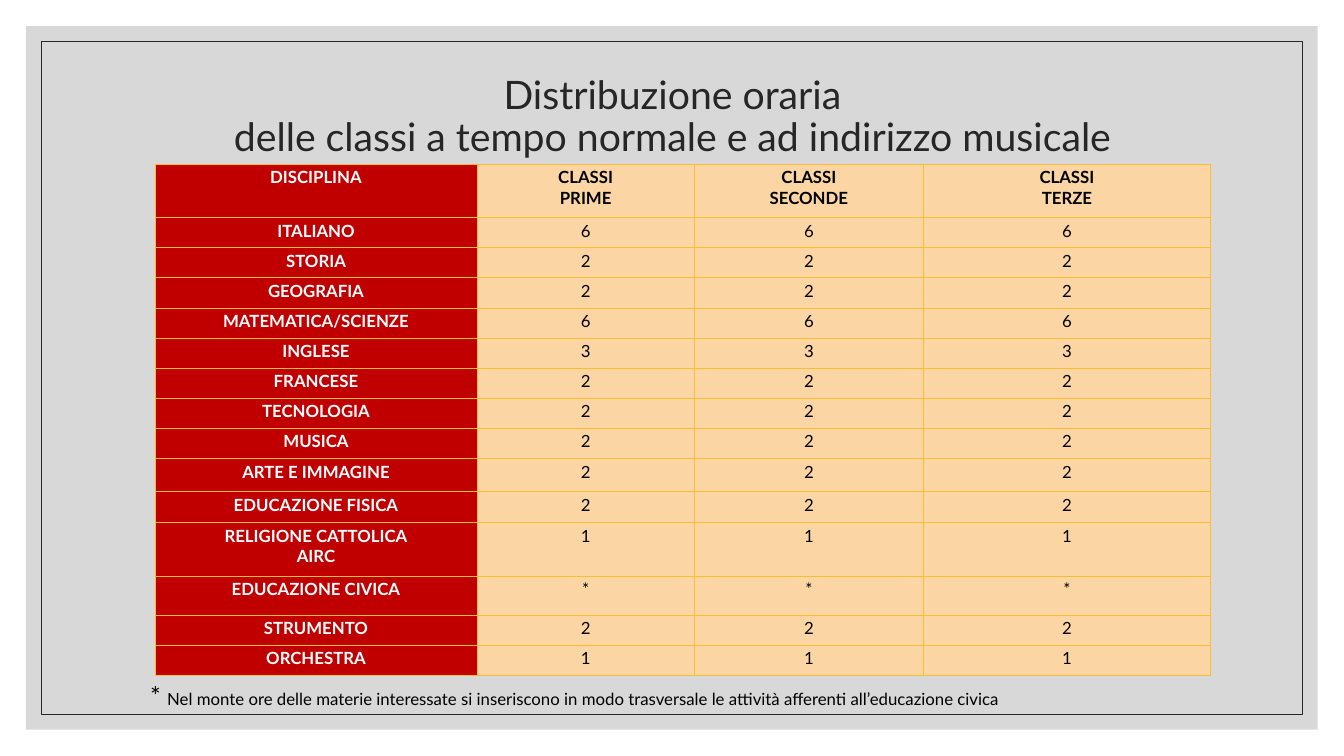
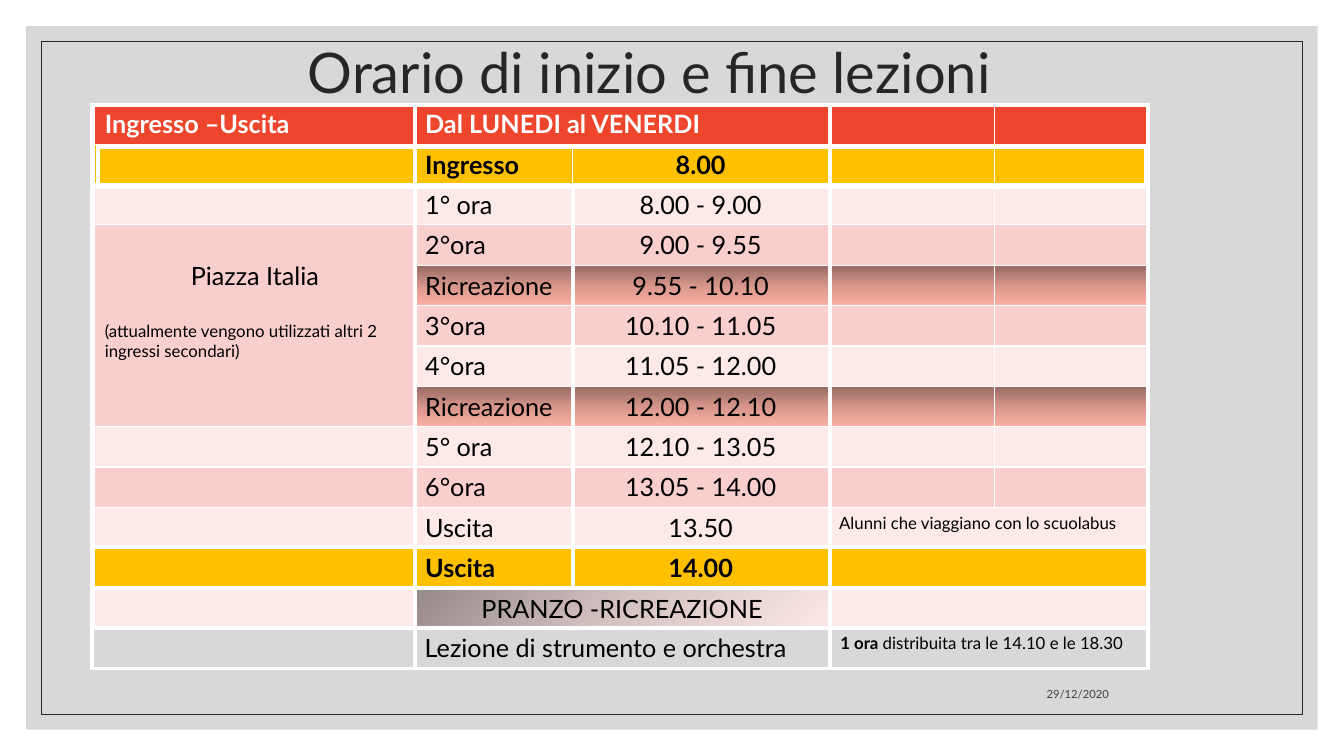
from dataclasses import dataclass

from lxml.etree import SubElement
from pptx import Presentation
from pptx.dml.color import RGBColor
from pptx.enum.shapes import MSO_SHAPE as Preset
from pptx.enum.text import MSO_ANCHOR as Anchor, PP_ALIGN as Align
from pptx.oxml.ns import qn
from pptx.util import Emu, Inches, Pt

WIDTH, HEIGHT = Inches(13.33), Inches(7.5)
FONT = "Lato"
BLACK, WHITE, INK, DATE_GREY, PAPER = "000000", "FFFFFF", "262626", "404040", "BFBFBF"
CRIMSON, PEACH, AMBER = "C00000", "FBD6A4", "FABD2F"
RED, GOLD, LIGHT, ROSE = "EE462D", "FFC000", "FCE9E8", "F8CFCD"
BREAK_FADE = (90, ("966962", "D6958B", "FEB1A5"))
LUNCH_FADE = (45, ("968989", "D5C3C2", "FDE7E6"))

SUBJECTS = [
    ("ITALIANO", "6"), ("STORIA", "2"), ("GEOGRAFIA", "2"),
    ("MATEMATICA/SCIENZE", "6"), ("INGLESE", "3"), ("FRANCESE", "2"),
    ("TECNOLOGIA", "2"), ("MUSICA", "2"), ("ARTE E IMMAGINE", "2"),
    ("EDUCAZIONE FISICA", "2"), ("RELIGIONE CATTOLICA\nAIRC", "1"),
    ("EDUCAZIONE CIVICA", "*"), ("STRUMENTO", "2"), ("ORCHESTRA", "1"),
]
SUBJECT_ROWS = [0.53] + [0.3] * 9 + [0.31, 0.53, 0.39, 0.3, 0.3]
SUBJECT_ROWS[9] = 0.33
LESSONS = [
    ("Ingresso", "8.00", GOLD),
    ("1° ora", "8.00 - 9.00", LIGHT),
    ("2°ora", "9.00 - 9.55", ROSE),
    ("Ricreazione", "9.55 - 10.10", BREAK_FADE),
    ("3°ora", "10.10 - 11.05", ROSE),
    ("4°ora", "11.05 - 12.00", LIGHT),
    ("Ricreazione", "12.00 - 12.10", BREAK_FADE),
    ("5° ora", "12.10 - 13.05", LIGHT),
    ("6°ora", "13.05 - 14.00", ROSE),
    ("Uscita", "13.50", LIGHT),
    ("Uscita", "14.00", GOLD),
]


@dataclass
class Box:
    """An area in hundredths of the slide's width and height."""
    left: float
    top: float
    width: float
    height: float

    def place(self):
        """Return left, top, width and height in EMU."""
        return (Emu(int(WIDTH * self.left / 100)), Emu(int(HEIGHT * self.top / 100)),
                Emu(int(WIDTH * self.width / 100)), Emu(int(HEIGHT * self.height / 100)))


@dataclass
class Span:
    """A piece of text with one look."""
    text: str
    size: float = 18
    bold: bool = False
    color: str = BLACK


def rgb(value):
    """Turn a hex string into a colour."""
    return RGBColor.from_string(value)


def write(para, spans, align=Align.LEFT):
    """Write spans into a paragraph, turning newlines into line breaks."""
    para.alignment = align
    for span in spans:
        for number, line in enumerate(span.text.split("\n")):
            if number:
                para.add_line_break()
            run = para.add_run()
            run.text = line
            run.font.name = FONT
            run.font.size = Pt(span.size)
            run.font.bold = span.bold
            run.font.color.rgb = rgb(span.color)


def add_text(page, box, spans, align=Align.LEFT, anchor=Anchor.TOP):
    """Add a wrapped text box and return its paragraph."""
    frame = page.shapes.add_textbox(*box.place()).text_frame
    frame.word_wrap = True
    frame.vertical_anchor = anchor
    write(frame.paragraphs[0], spans, align)
    return frame.paragraphs[0]


def add_title(page, box, text, size):
    """Add a centred title."""
    para = add_text(page, box, [Span(text, size, color=INK)], Align.CENTER, Anchor.MIDDLE)
    para.line_spacing = 0.9


def add_panel(page, inset):
    """Add a rectangle inset equally from all slide edges."""
    margin = int(WIDTH * inset / 100)
    panel = page.shapes.add_shape(Preset.RECTANGLE, margin, margin,
                                  WIDTH - 2 * margin, HEIGHT - 2 * margin)
    panel.shadow.inherit = False
    return panel


def add_page(deck):
    """Add a blank page with the grey panel and its thin frame."""
    page = deck.slides.add_slide(deck.slide_layouts[6])
    panel = add_panel(page, 1.95)
    panel.fill.solid()
    panel.fill.fore_color.rgb = rgb(PAPER)
    color = panel.fill._xPr.find(qn("a:solidFill"))[0]
    SubElement(color, qn("a:alpha"), val="60000")
    panel.line.fill.background()
    border = add_panel(page, 3.08)
    border.fill.background()
    border.line.color.rgb = rgb(INK)
    border.line.width = Pt(0.5)
    return page


def rule(cell, color, width):
    """Draw the four borders of a cell that has no fill yet."""
    props = cell._tc.get_or_add_tcPr()
    for side in "LRTB":
        line = SubElement(props, qn(f"a:ln{side}"), w=str(Pt(width)))
        SubElement(SubElement(line, qn("a:solidFill")), qn("a:srgbClr"), val=color)


def paint(cell, fill):
    """Fill a cell with a colour, with an (angle, colours) fade, or with nothing."""
    if fill is None:
        cell.fill.background()
    elif isinstance(fill, str):
        cell.fill.solid()
        cell.fill.fore_color.rgb = rgb(fill)
    else:
        angle, colors = fill
        fade = SubElement(cell._tc.get_or_add_tcPr(), qn("a:gradFill"))
        stops = SubElement(fade, qn("a:gsLst"))
        for number, color in enumerate(colors):
            stop = SubElement(stops, qn("a:gs"), pos=str(number * 50000))
            SubElement(stop, qn("a:srgbClr"), val=color)
        SubElement(fade, qn("a:lin"), ang=str(angle * 60000), scaled="0")


def add_grid(page, box, columns, rows, fills, color, width):
    """Add a table whose columns and rows share the box by weight."""
    place = box.place()
    table = page.shapes.add_table(len(rows), len(columns), *place).table
    table.first_row = table.horz_banding = False
    for column, weight in zip(table.columns, columns):
        column.width = Emu(int(place[2] * weight / sum(columns)))
    for row, weight in zip(table.rows, rows):
        row.height = Emu(int(place[3] * weight / sum(rows)))
    for row, row_fills in zip(table.rows, fills):
        for cell, fill in zip(row.cells, row_fills):
            rule(cell, color, width)
            paint(cell, fill)
    return table


def merge(table, row, first, last):
    """Join neighbouring cells of one row."""
    table.cell(row, first).merge(table.cell(row, last))


def put(cell, spans, align=Align.LEFT):
    """Write spans into the first paragraph of a cell."""
    write(cell.text_frame.paragraphs[0], spans, align)


def add_subjects(page, box):
    """Add the weekly hours of each subject."""
    fills = [[CRIMSON] + [PEACH] * 3] * len(SUBJECT_ROWS)
    table = add_grid(page, box, [3.19, 2.16, 2.27, 2.85], SUBJECT_ROWS, fills, AMBER, 0.5)
    heads = ["DISCIPLINA"] + [f"CLASSI\n{year}" for year in ("PRIME", "SECONDE", "TERZE")]
    lines = [heads] + [[name] + [hours] * 3 for name, hours in SUBJECTS]
    for number, line in enumerate(lines):
        for index, text in enumerate(line):
            cell = table.cell(number, index)
            cell.margin_left = cell.margin_right = Inches(0.03)
            cell.margin_top = cell.margin_bottom = Inches(0.03)
            span = Span(text, 12, number == 0 or index == 0, BLACK if index else WHITE)
            put(cell, [span], Align.CENTER)


def add_entrance(table, first, last):
    """Join the entrance cells and describe the entrance."""
    cell = table.cell(first, 0)
    cell.merge(table.cell(last, 0))
    cell.margin_top = Inches(0.35)
    put(cell, [Span("Piazza Italia")], Align.CENTER)
    para = cell.text_frame.add_paragraph()
    para.space_before = Pt(21.6)
    write(para, [Span("(attualmente vengono utilizzati altri 2 ingressi secondari)", 12)])


def add_lessons(page, box):
    """Add the daily timetable."""
    fills = [[RED] * 5] + [[fill] * 5 for _, _, fill in LESSONS]
    fills.append([LIGHT] + [LUNCH_FADE] * 2 + [LIGHT] * 2)
    fills[3:8] = [[ROSE] + line[1:] for line in fills[3:8]]
    table = add_grid(page, box, [3.18, 1.56, 2.55, 1.64, 1.51], [1] * len(fills),
                     fills, WHITE, 1)
    for index, text in enumerate(("Ingresso –Uscita", "Dal LUNEDI al VENERDI")):
        put(table.cell(0, index), [Span(text, bold=True, color=WHITE)])
    for number, (name, hours, fill) in enumerate(LESSONS, 1):
        put(table.cell(number, 1), [Span(name, bold=fill == GOLD)])
        put(table.cell(number, 2), [Span(hours, bold=fill == GOLD)], Align.CENTER)
    put(table.cell(10, 3), [Span("Alunni che viaggiano con lo scuolabus", 12)])
    put(table.cell(12, 1), [Span("PRANZO -RICREAZIONE")], Align.CENTER)
    for row, first in ((0, 1), (10, 3), (11, 3), (12, 1), (12, 3)):
        merge(table, row, first, first + 1)
    add_entrance(table, 3, 7)


def add_outline(page, box):
    """Add the thick white grid, whose last row holds the music lessons."""
    table = add_grid(page, box, [3.2, 1.57, 2.55, 3.15], [0.79, 3.6, 0.4, 0.4, 0.4],
                     [[None] * 4] * 5, WHITE, 3)
    for row in (0, 3, 4):
        merge(table, row, 1, 2)
    put(table.cell(4, 1), [Span("Lezione di strumento e orchestra")])
    put(table.cell(4, 3), [Span("1 ora ", 12, True),
                           Span("distribuita tra le 14.10 e le 18.30", 12)])


def subjects_page(deck):
    """Build the page on weekly hours."""
    page = add_page(deck)
    add_title(page, Box(8.78, 5.6, 82.5, 20),
              "Distribuzione oraria\ndelle classi a tempo normale e ad indirizzo musicale", 28)
    add_subjects(page, Box(11.55, 21.73, 78.53, 67.6))
    note = ("Nel monte ore delle materie interessate si inseriscono in modo trasversale "
            "le attività afferenti all’educazione civica")
    add_text(page, Box(10.43, 89.33, 76.5, 5.33), [Span("* "), Span(note, 12)])


def lessons_page(deck):
    """Build the page on lesson times."""
    page = add_page(deck)
    add_title(page, Box(7.05, 0, 82.5, 20), "Orario di inizio e fine lezioni", 40)
    add_lessons(page, Box(7.05, 13.73, 78.25, 69.33))
    add_text(page, Box(59.55, 88, 23.7, 5.33), [Span("29/12/2020", 8, color=DATE_GREY)],
             Align.RIGHT, Anchor.BOTTOM)
    add_outline(page, Box(6.83, 13.87, 78.6, 74.53))
    add_grid(page, Box(7.28, 19.47, 78, 5.33), [1], [1], [[None]], WHITE, 3)


def main():
    """Build and save the deck."""
    deck = Presentation()
    deck.slide_width, deck.slide_height = WIDTH, HEIGHT
    subjects_page(deck)
    lessons_page(deck)
    deck.save("out.pptx")


if __name__ == "__main__":
    main()
